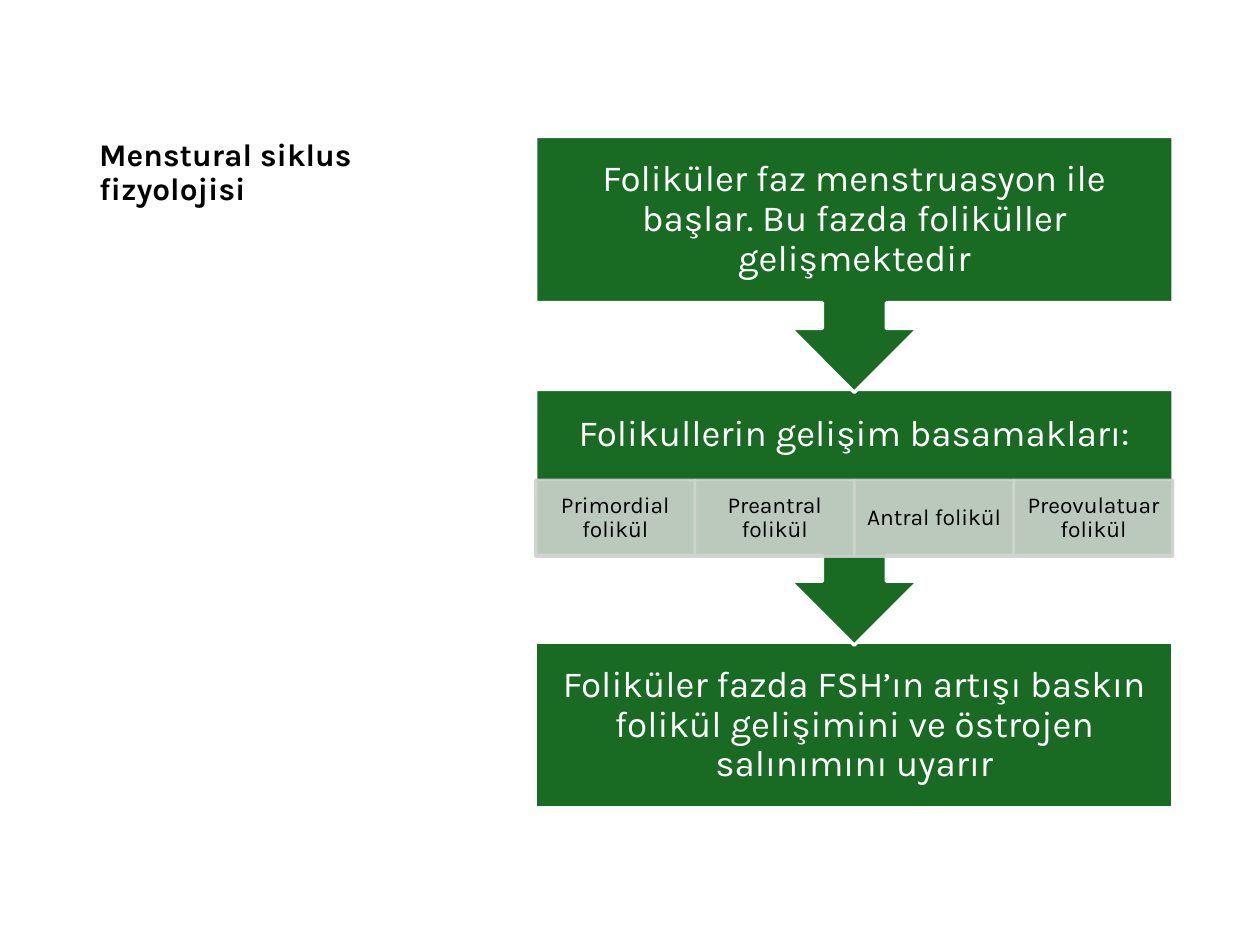
from pptx import Presentation
from pptx.dml.color import RGBColor
from pptx.enum.shapes import MSO_SHAPE
from pptx.enum.text import MSO_ANCHOR, MSO_AUTO_SIZE, PP_ALIGN
from pptx.oxml.ns import qn
from pptx.util import Pt
from lxml import etree

RECT, CALLOUT = MSO_SHAPE.RECTANGLE, MSO_SHAPE.DOWN_ARROW_CALLOUT
LEFT, CENTER = PP_ALIGN.LEFT, PP_ALIGN.CENTER
MIDDLE, NO_FIT = MSO_ANCHOR.MIDDLE, MSO_AUTO_SIZE.NONE

BLACK = RGBColor(0x00, 0x00, 0x00)
WHITE = RGBColor(0xFF, 0xFF, 0xFF)
GREEN = RGBColor(0x19, 0x6B, 0x24)
SAGE = RGBColor(0xCC, 0xD4, 0xCD)
FONT = "Karla"
BODY_SHARE = 0.65  # part of a callout's height above its arrow

FIRST = "Foliküler faz menstruasyon ile başlar. Bu fazda foliküller gelişmektedir"
SECOND = "Folikullerin gelişim basamakları:"
THIRD = "Foliküler fazda FSH’ın artışı baskın folikül gelişimini ve östrojen salınımını uyarır"
STAGES = ["Primordial folikül", "Preantral folikül", "Antral folikül", "Preovulatuar folikül"]


def write(sp, text, size, color, bold=False, align=CENTER, insets=(7.2, 3.6, 7.2, 3.6)):
    tf = sp.text_frame
    tf.word_wrap, tf.auto_size, tf.vertical_anchor = True, NO_FIT, MIDDLE
    tf.margin_left, tf.margin_top, tf.margin_right, tf.margin_bottom = map(Pt, insets)
    p = tf.paragraphs[0]
    p.alignment, p.line_spacing = align, 0.9
    r = p.add_run()
    r.text = text
    r.font.name, r.font.size, r.font.bold = FONT, Pt(size), bold
    r.font.color.rgb = color


def add_block(s, kind, box, fill, line, line_width, opacity=100):
    sp = s.shapes.add_shape(kind, *map(Pt, box))
    sp.shadow.inherit = False
    sp.fill.solid()
    sp.fill.fore_color.rgb = fill
    sp.line.color.rgb = line
    sp.line.width = Pt(line_width)
    if opacity < 100:
        for clr in sp._element.spPr.iter(qn("a:srgbClr")):
            etree.SubElement(clr, qn("a:alpha"), val=str(opacity * 1000))
    return sp


def add_step(s, kind, box, text, reserved=0):
    """Green step; reserved is the height kept free under its text."""
    sp = add_block(s, kind, box, GREEN, WHITE, 2)
    write(sp, text, 21, WHITE, insets=(11.5, 11.5, 11.5, 11.5 + reserved))


def add_stages(s, box):
    left, top, width, height = box
    cell = width / len(STAGES)
    for i, stage in enumerate(STAGES):
        sp = add_block(s, RECT, (left + i * cell, top, cell, height), SAGE, SAGE, 1.5, 90)
        write(sp, stage, 13, BLACK, insets=(7.2, 1.4, 7.2, 1.4))


def add_flow(s, box):
    left, top, width, height = box
    pitch, callout, stages = 144.5, 146.2, 43.7
    body = callout * BODY_SHARE
    # Later steps lie behind the arrows that point to them
    add_step(s, RECT, (left, top + 2 * pitch, width, height - 2 * pitch), THIRD)
    add_step(s, CALLOUT, (left, top + pitch, width, callout), SECOND, stages)
    add_stages(s, (left, top + pitch + body - stages + 0.5, width, stages))
    add_step(s, CALLOUT, (left, top, width, callout), FIRST)


def add_title(s, box):
    sp = s.shapes.title
    sp.left, sp.top, sp.width, sp.height = map(Pt, box)
    write(sp, "Menstural siklus fizyolojisi", 18, BLACK, bold=True, align=LEFT)


def main():
    prs = Presentation()
    prs.slide_width, prs.slide_height = Pt(720), Pt(540)
    s = prs.slides.add_slide(prs.slide_layouts[5])
    add_title(s, (49.5, 36, 232.5, 126))
    add_flow(s, (306, 78, 364.4, 383.7))
    prs.save("out.pptx")


if __name__ == "__main__":
    main()
